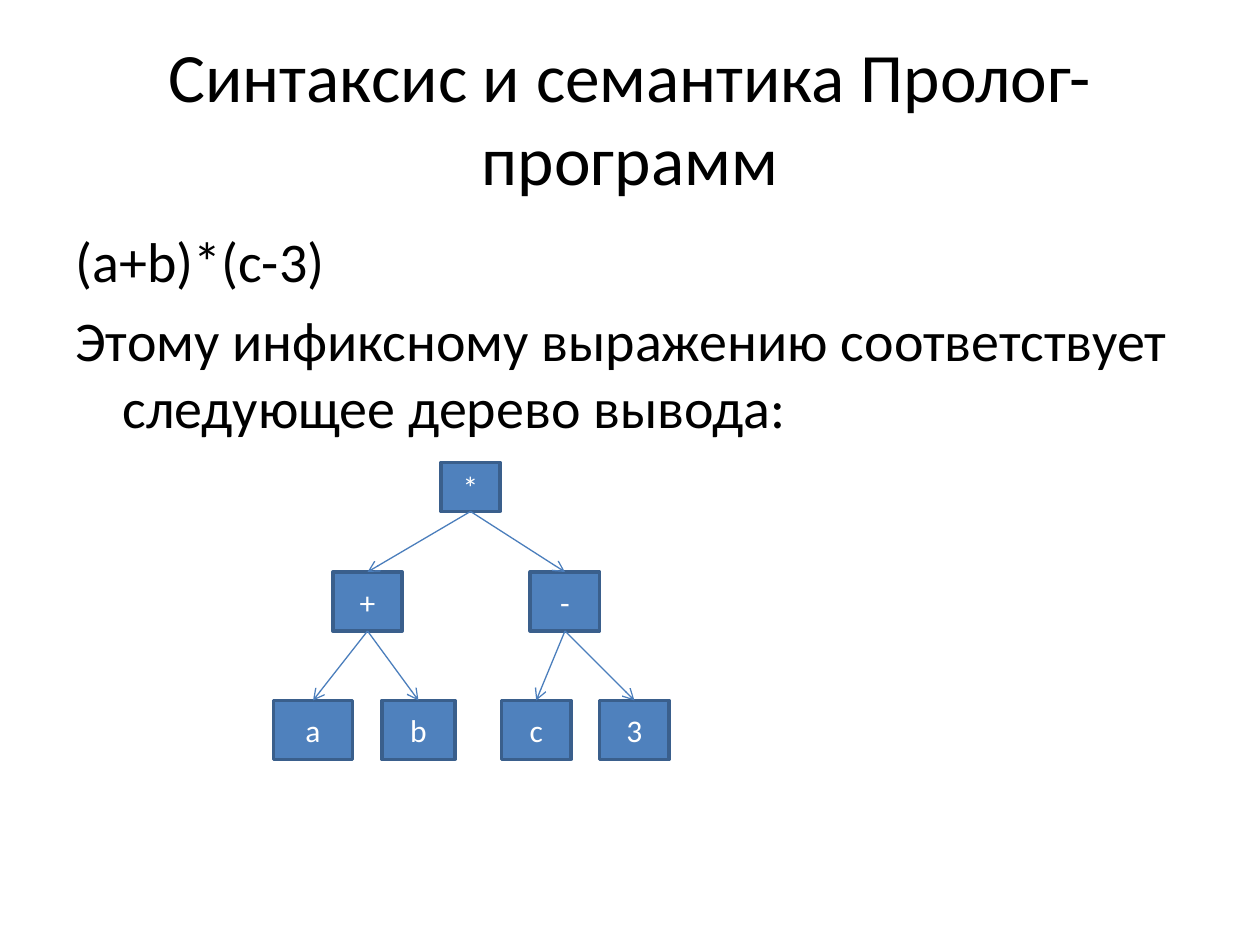
from pptx import Presentation
from pptx.dml.color import RGBColor
from pptx.enum.shapes import MSO_CONNECTOR as Link, MSO_SHAPE as Shape
from pptx.enum.text import MSO_ANCHOR as Anchor, PP_ALIGN as Align
from pptx.oxml.ns import qn
from pptx.util import Cm, Pt
from lxml.etree import SubElement

BLACK = RGBColor(0x00, 0x00, 0x00)
WHITE = RGBColor(0xFF, 0xFF, 0xFF)
BLUE = RGBColor(0x4F, 0x81, 0xBD)
EDGE = RGBColor(0x3A, 0x5F, 0x8C)
ARROW = RGBColor(0x4B, 0x7E, 0xBC)


class Page:
    font = "Calibri"
    top, base = 0, 2  # connection sites of a rectangle

    def __init__(self, slide):
        self.shapes = slide.shapes

    def label(self, para, text, size, color):
        run = para.add_run()
        run.text = text
        run.font.name = self.font
        run.font.size = Pt(size)
        run.font.color.rgb = color

    def frame(self, x, y, w, h):
        box = self.shapes.add_textbox(Cm(x), Cm(y), Cm(w), Cm(h))
        box.text_frame.word_wrap = True
        return box.text_frame

    def title(self, text, *area):
        frame = self.frame(*area)
        frame.vertical_anchor = Anchor.MIDDLE
        para = frame.paragraphs[0]
        para.alignment = Align.CENTER
        self.label(para, text, 39.6, BLACK)

    def body(self, lines, *area):
        frame = self.frame(*area)
        for i, text in enumerate(lines):
            para = frame.add_paragraph() if i else frame.paragraphs[0]
            para.space_before = Pt(6.4)
            props = para._p.get_or_add_pPr()
            props.set("marL", str(Cm(0.95)))
            props.set("indent", str(-Cm(0.95)))
            self.label(para, text, 32, BLACK)

    def node(self, text, x, y, w, h):
        box = self.shapes.add_shape(Shape.RECTANGLE, Cm(x), Cm(y), Cm(w), Cm(h))
        box.shadow.inherit = False
        box.fill.solid()
        box.fill.fore_color.rgb = BLUE
        box.line.color.rgb = EDGE
        box.line.width = Pt(2)
        box.text_frame.vertical_anchor = Anchor.MIDDLE
        para = box.text_frame.paragraphs[0]
        para.alignment = Align.CENTER
        self.label(para, text, 18, WHITE)
        return box

    def arrow(self, start, end):
        link = self.shapes.add_connector(Link.STRAIGHT, 0, 0, 0, 0)
        link.begin_connect(start, self.base)
        link.end_connect(end, self.top)
        link.line.color.rgb = ARROW
        link.line.width = Pt(0.75)
        props = link._element.spPr
        SubElement(props.find(qn("a:ln")), qn("a:tailEnd"), type="arrow")
        SubElement(props, qn("a:effectLst"))


def main():
    deck = Presentation()
    deck.slide_width, deck.slide_height = Cm(25.4), Cm(19.05)
    page = Page(deck.slides.add_slide(deck.slide_layouts[6]))

    # Heading and text
    page.title("Синтаксис и семантика Пролог-программ", 1.27, 0.76, 22.86, 3.18)
    page.body(
        ["(a+b)*(c-3)",
         "Этому инфиксному выражению соответствует следующее дерево вывода:"],
        1.27, 4.45, 22.86, 12.57)

    # Tree nodes: top and height of each row, then label, left and width
    rows = [
        (9.32, 0.99, [("*", 8.89, 1.19)]),
        (11.53, 1.19, [("+", 6.71, 1.4), ("-", 10.69, 1.4)]),
        (14.12, 1.19, [("a", 5.51, 1.6), ("b", 7.7, 1.47),
                       ("c", 10.11, 1.4), ("3", 12.09, 1.4)]),
    ]
    nodes = [page.node(text, x, y, w, h)
             for y, h, row in rows for text, x, w in row]

    # Arrows: each node of the binary tree hangs from its parent
    for i, child in enumerate(nodes[1:]):
        page.arrow(nodes[i // 2], child)

    deck.save("out.pptx")


if __name__ == "__main__":
    main()
